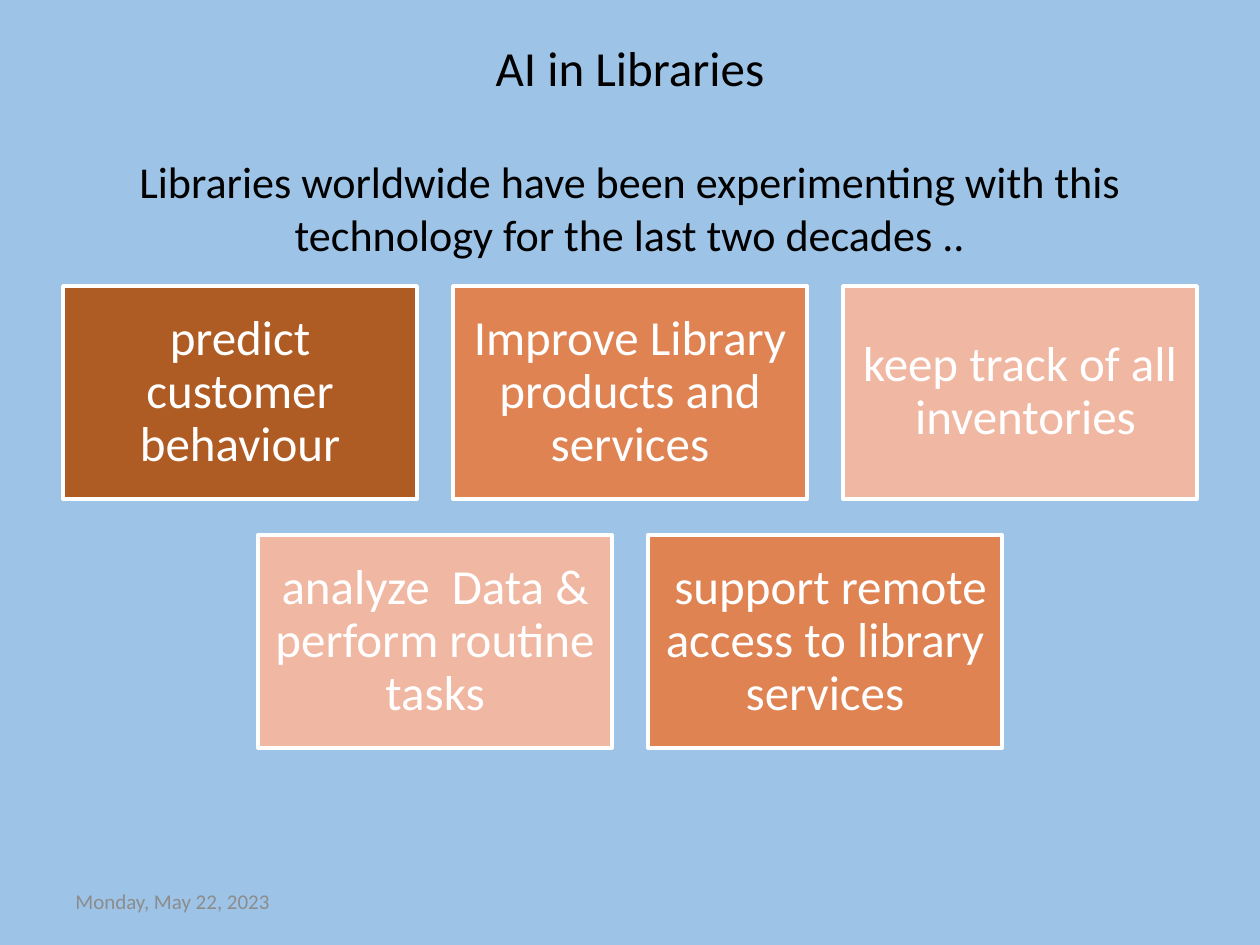
from dataclasses import dataclass

from pptx import Presentation
from pptx.dml.color import RGBColor
from pptx.enum.shapes import MSO_SHAPE
from pptx.enum.text import MSO_ANCHOR, PP_ALIGN
from pptx.slide import Slide
from pptx.text.text import TextFrame
from pptx.util import Inches, Pt


@dataclass(frozen=True)
class Theme:
    font: str = "Calibri"
    back: str = "9DC3E6"
    ink: str = "000000"
    white: str = "FFFFFF"
    grey: str = "8C8C8C"
    dark: str = "AF5C24"
    mid: str = "DF8353"
    pale: str = "F0B7A2"
    head: float = 28
    lead: float = 25.2
    small: float = 12


@dataclass(frozen=True)
class Card:
    text: str
    fill: str
    col: float
    row: int


THEME = Theme()

# Grid: three columns between the side margins
WIDE, HIGH = 10, 7.5
LEFT, TOP = WIDE * 0.05, 2.27
SPAN = WIDE - 2 * LEFT
CARD_W, CARD_H = 2.81, 1.69
GAP = (SPAN - 3 * CARD_W) / 2

CARDS = (
    Card("predict customer behaviour", THEME.dark, 0, 0),
    Card("Improve Library products and services", THEME.mid, 1, 0),
    Card("keep track of all  inventories", THEME.pale, 2, 0),
    Card("analyze  Data & perform routine tasks", THEME.pale, 0.5, 1),
    Card(" support remote access to library services", THEME.mid, 1.5, 1),
)


def color(code: str) -> RGBColor:
    return RGBColor.from_string(code)


def write(frame: TextFrame, text: str, *, size: float, ink: str,
          align: PP_ALIGN = PP_ALIGN.CENTER, lines: float = 1,
          before: float = 0, more: bool = False) -> None:
    """Fill the first paragraph, or add one more."""
    para = frame.add_paragraph() if more else frame.paragraphs[0]
    para.alignment = align
    para.line_spacing = lines
    para.space_before = Pt(before)
    run = para.add_run()
    run.text = text
    run.font.name = THEME.font
    run.font.size = Pt(size)
    run.font.color.rgb = color(ink)


def add_box(slide: Slide, left: float, top: float, width: float,
            height: float, anchor: MSO_ANCHOR) -> TextFrame:
    box = slide.shapes.add_textbox(
        Inches(left), Inches(top), Inches(width), Inches(height))
    frame = box.text_frame
    frame.word_wrap = True
    frame.vertical_anchor = anchor
    return frame


def add_card(slide: Slide, card: Card) -> None:
    shape = slide.shapes.add_shape(
        MSO_SHAPE.RECTANGLE,
        Inches(LEFT + card.col * (CARD_W + GAP)),
        Inches(TOP + card.row * (CARD_H + GAP)),
        Inches(CARD_W), Inches(CARD_H))
    shape.shadow.inherit = False
    shape.fill.solid()
    shape.fill.fore_color.rgb = color(card.fill)
    shape.line.color.rgb = color(THEME.white)
    shape.line.width = Pt(2)
    frame = shape.text_frame
    frame.word_wrap = True
    frame.vertical_anchor = MSO_ANCHOR.MIDDLE
    frame.margin_left = frame.margin_right = Inches(0.12)
    frame.margin_top = frame.margin_bottom = Inches(0.12)
    write(frame, card.text, size=THEME.head, ink=THEME.white, lines=0.9)


def main() -> None:
    deck = Presentation()
    deck.slide_width, deck.slide_height = Inches(WIDE), Inches(HIGH)
    slide = deck.slides.add_slide(deck.slide_layouts[6])
    slide.background.fill.solid()
    slide.background.fill.fore_color.rgb = color(THEME.back)

    # Cards
    for card in CARDS:
        add_card(slide, card)

    # Title and lead sentence
    title = add_box(slide, LEFT, HIGH * 0.04, SPAN, HIGH * 0.24, MSO_ANCHOR.TOP)
    title.margin_top = title.margin_bottom = 0
    write(title, "AI in Libraries", size=THEME.head, ink=THEME.ink)
    write(title, "Libraries worldwide have been experimenting with this "
          "technology for the last two decades ..",
          size=THEME.lead, ink=THEME.ink, before=33, more=True)

    # Date
    date = add_box(slide, LEFT, 6.95, 2.33, 0.4, MSO_ANCHOR.MIDDLE)
    write(date, "Monday, May 22, 2023", size=THEME.small, ink=THEME.grey,
          align=PP_ALIGN.LEFT)

    deck.save("out.pptx")


if __name__ == "__main__":
    main()
